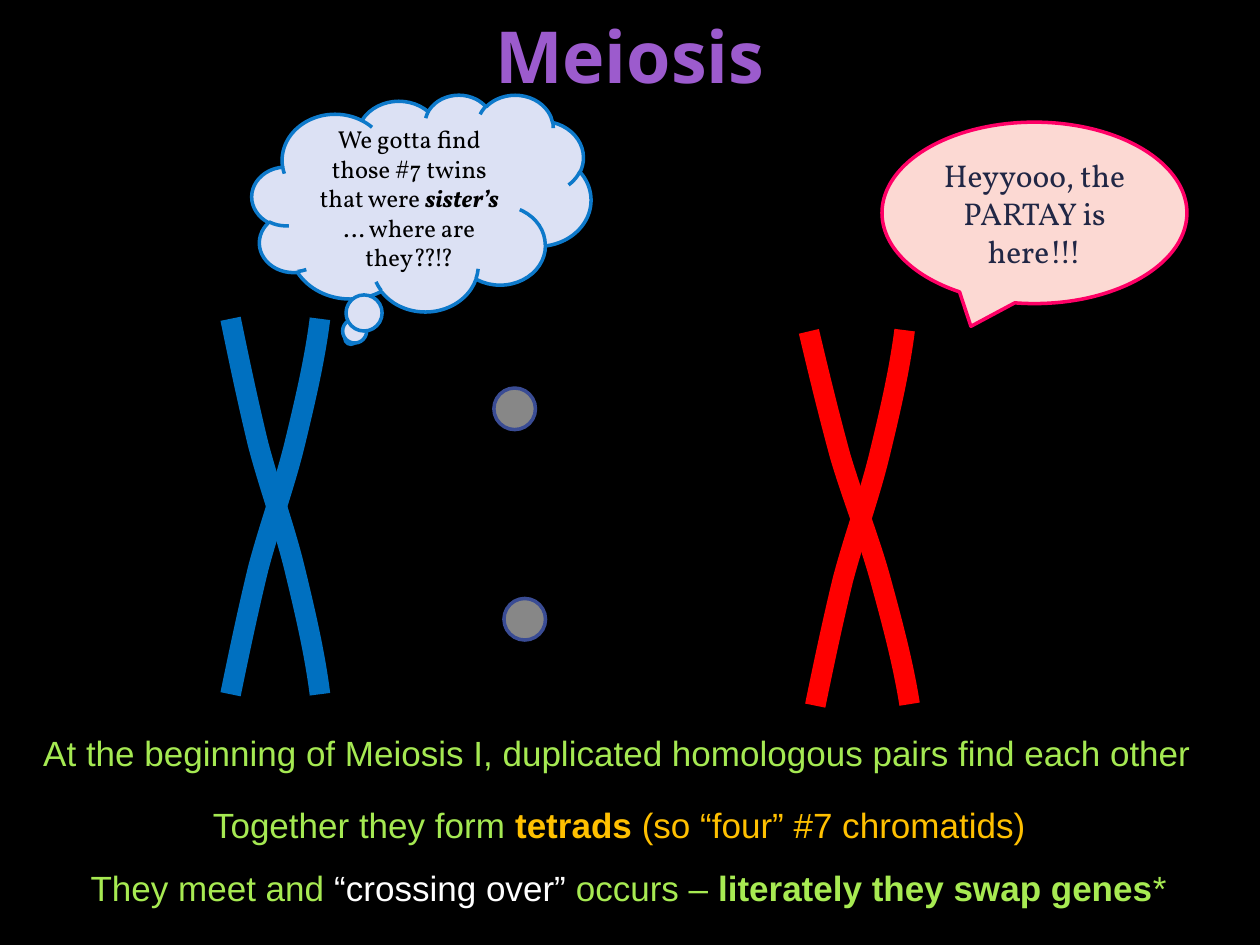
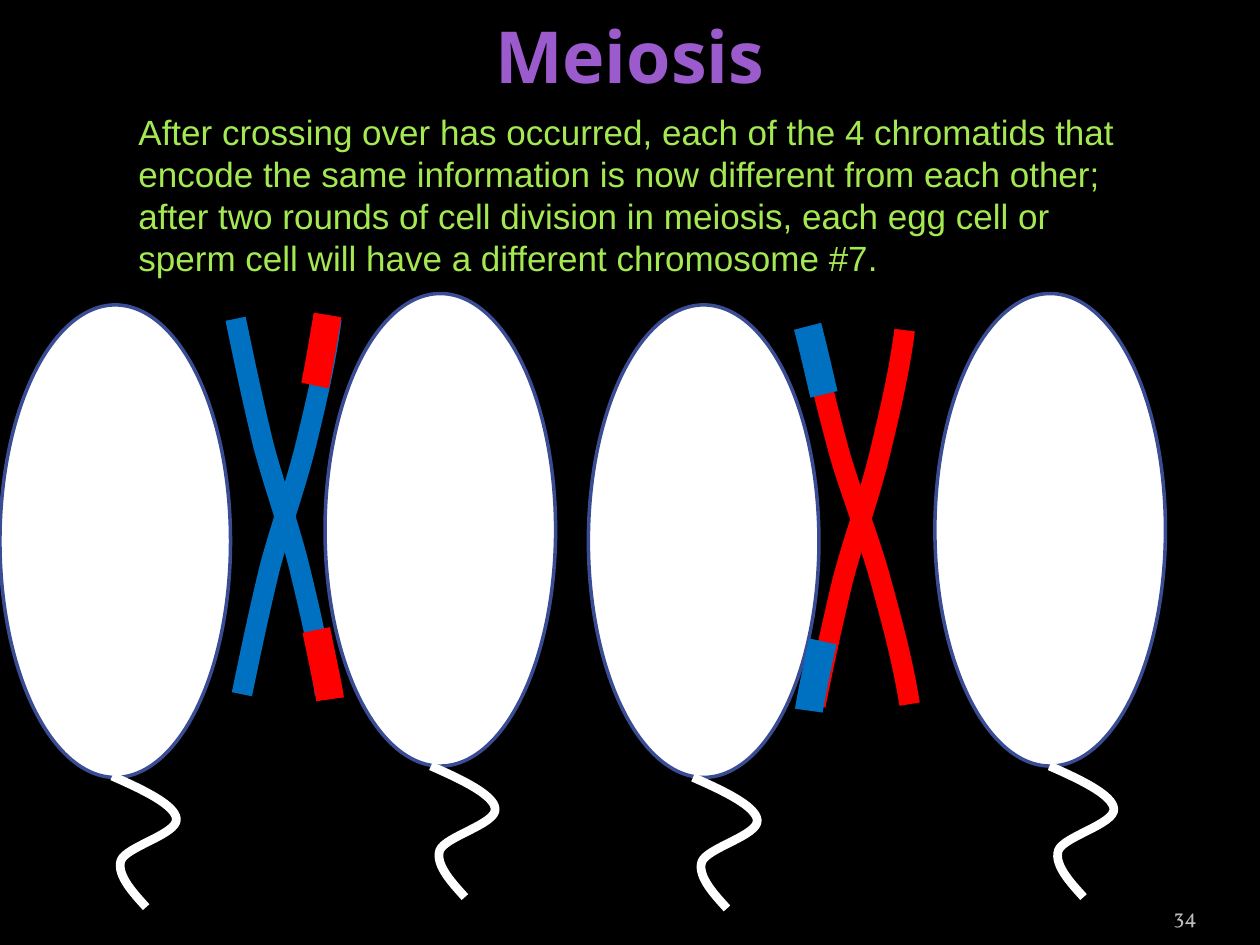
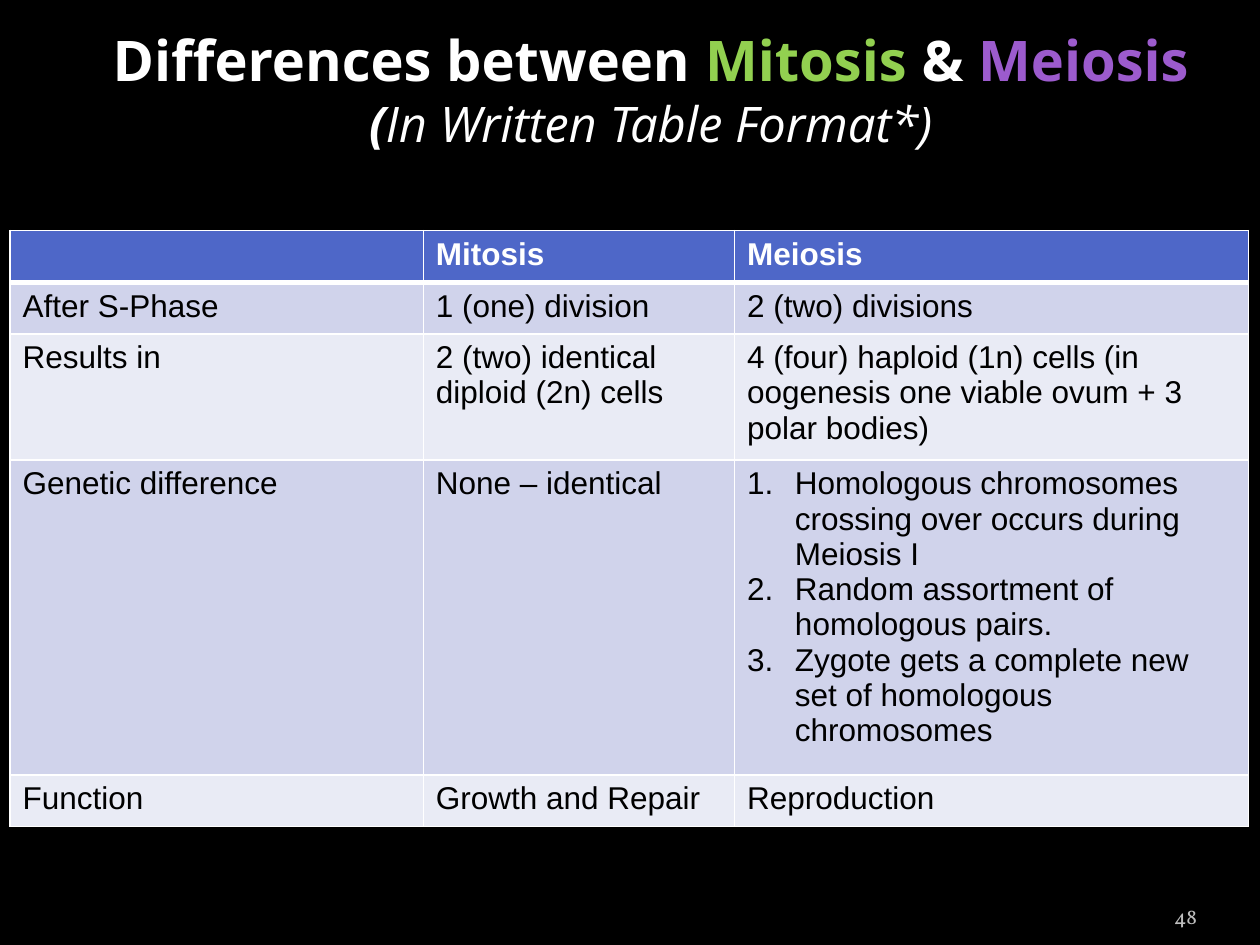
from lxml.etree import SubElement
from pptx import Presentation
from pptx.dml.color import RGBColor
from pptx.enum.shapes import MSO_SHAPE
from pptx.enum.text import MSO_ANCHOR, PP_ALIGN
from pptx.oxml.ns import qn
from pptx.util import Inches, Pt

COLORS = {
    "background": "000000", "white": "FFFFFF", "black": "000000",
    "purple": "9C5BCD", "green": "A5E952", "lime": "A7EA52",
    "mitosis": "92D050", "gold": "FFC000", "blue": "0070C0",
    "red": "FF0000", "outline": "3A4C94", "cloud": "DCE1F4",
    "cloud_line": "0D79CA", "bubble": "FCD9D3", "bubble_line": "FF0066",
    "navy": "212745", "number": "BDBDBD", "header": "4E67C8",
    "band_dark": "D0D3EB", "band_light": "E9EBF5",
}
RGB = {name: RGBColor.from_string(value) for name, value in COLORS.items()}

ARM = [(0, 0), (0.07, 0.34), (0.14, 0.67), (0.22, 1), (0.31, 1.34),
       (0.43, 1.66), (0.51, 1.99), (0.59, 2.32), (0.67, 2.66), (0.71, 2.98)]
TAIL = [(0, 0), (0.25, 0.11), (0.5, 0.23), (0.51, 0.34), (0.52, 0.46),
        (0.11, 0.56), (0.07, 0.67), (0.03, 0.79), (0.19, 0.95), (0.27, 1.04)]


def add_runs(paragraph, runs, font_name, size):
    for text, color, style in runs:
        for index, line in enumerate(text.split("\n")):
            if index:
                paragraph.add_line_break()
            if line:
                run = paragraph.add_run()
                run.text = line
                run.font.name = font_name
                run.font.size = Pt(28 if "s" in style else size)
                run.font.bold = "b" in style
                run.font.italic = "i" in style
                run.font.color.rgb = RGB[color]


def draw_curve(slide, points, color, width):
    start, *controls = [(Inches(x), Inches(y)) for x, y in points]
    builder = slide.shapes.build_freeform(*start)
    builder.add_line_segments(controls, close=False)
    shape = builder.convert_to_shape()
    outline = next(shape._element.iter(qn("a:path")))
    segments = outline.findall(qn("a:lnTo"))
    for first in range(0, len(segments), 3):
        curve = SubElement(outline, qn("a:cubicBezTo"))
        for segment in segments[first:first + 3]:
            curve.append(segment[0])
            outline.remove(segment)
    shape.shadow.inherit = False
    shape.fill.background()
    shape.line.color.rgb = RGB[color]
    shape.line.width = Pt(width)


presentation = Presentation()
presentation.slide_width = Inches(10)
presentation.slide_height = Inches(7.5)
slides = []
for _ in range(3):
    slide = presentation.slides.add_slide(presentation.slide_layouts[6])
    slide.background.fill.solid()
    slide.background.fill.fore_color.rgb = RGB["background"]
    slides.append(slide)
pairing_slide, sperm_slide, table_slide = slides

ovals = [
    (pairing_slide, 3.92, 3.08, 0.33, 0.33, 53),
    (pairing_slide, 4, 4.75, 0.33, 0.33, 53),
    (sperm_slide, 0, 2.42, 1.83, 3.75, 100),
    (sperm_slide, 2.58, 2.33, 1.83, 3.75, 100),
    (sperm_slide, 4.67, 2.42, 1.83, 3.75, 100),
    (sperm_slide, 7.42, 2.33, 1.83, 3.75, 100),
]
for slide, left, top, width, height, opacity in ovals:
    oval = slide.shapes.add_shape(MSO_SHAPE.OVAL, Inches(left), Inches(top),
                                  Inches(width), Inches(height))
    oval.shadow.inherit = False
    oval.fill.solid()
    oval.fill.fore_color.rgb = RGB["white"]
    oval.line.color.rgb = RGB["outline"]
    oval.line.width = Pt(2)
    if opacity < 100:
        color_element = oval._element.spPr.find(qn("a:solidFill"))[0]
        SubElement(color_element, qn("a:alpha")).set("val", str(opacity * 1000))

chromatids = [
    (pairing_slide, 1.83, 2.53, 1, 0, "blue"),
    (pairing_slide, 1.83, 5.51, -1, 0, "blue"),
    (pairing_slide, 6.47, 5.6, -1, 0, "red"),
    (pairing_slide, 6.42, 2.63, 1, 0.03, "red"),
    (sperm_slide, 1.87, 2.53, 1, 0, "blue"),
    (sperm_slide, 1.92, 5.51, -1, 0, "blue"),
    (sperm_slide, 6.47, 5.6, -1, 0, "red"),
    (sperm_slide, 6.42, 2.63, 1, 0.03, "red"),
]
for slide, left, start, direction, lean, color in chromatids:
    arm = [(left + x + lean * y, start + direction * (y - lean * x)) for x, y in ARM]
    draw_curve(slide, arm, color, 11.75)

swapped_tips = [
    ([(2.6, 2.5), (2.56, 2.74), (2.52, 2.97), (2.5, 3.06)], "red"),
    ([(2.51, 5), (2.56, 5.24), (2.61, 5.47), (2.62, 5.55)], "red"),
    ([(6.53, 5.09), (6.48, 5.32), (6.43, 5.56), (6.42, 5.64)], "blue"),
    ([(6.41, 2.59), (6.47, 2.82), (6.52, 3.05), (6.54, 3.13)], "blue"),
]
for points, color in swapped_tips:
    draw_curve(sperm_slide, points, color, 16)

for left, top in [(0.89, 6.16), (3.42, 6.08), (5.5, 6.17), (8.33, 6.08)]:
    draw_curve(sperm_slide, [(left + x, top + y) for x, y in TAIL], "white", 5)

callouts = [
    (MSO_SHAPE.CLOUD_CALLOUT, (2, 0.75, 2.69, 1.72), "cloud", "cloud_line", 14,
     [("We gotta find those #7 twins that were ", "black", ""),
      ("sister’s", "black", "bi"),
      (" … where are they??!?", "black", "")]),
    (MSO_SHAPE.OVAL_CALLOUT, (7, 0.97, 2.42, 1.44), "bubble", "bubble_line", 18,
     [("Heyyooo, the PARTAY is here!!!", "navy", "")]),
]
for kind, bounds, fill, line, size, runs in callouts:
    callout = pairing_slide.shapes.add_shape(kind, *map(Inches, bounds))
    callout.shadow.inherit = False
    callout.fill.solid()
    callout.fill.fore_color.rgb = RGB[fill]
    callout.line.color.rgb = RGB[line]
    callout.line.width = Pt(2)
    callout.text_frame.vertical_anchor = MSO_ANCHOR.MIDDLE
    paragraph = callout.text_frame.paragraphs[0]
    paragraph.alignment = PP_ALIGN.CENTER
    add_runs(paragraph, runs, "Vollkorn", size)

titles = [
    (pairing_slide, (0.5, 0, 9, 0.87), 41, [("Meiosis", "purple", "b")]),
    (sperm_slide, (0.5, 0, 9, 0.87), 41, [("Meiosis", "purple", "b")]),
    (table_slide, (0.25, 0.08, 9.83, 1.25), 32,
     [("Differences between ", "white", "b"), ("Mitosis", "mitosis", "b"),
      (" & ", "white", "b"), ("Meiosis\n", "purple", "b"),
      ("(", "white", "bis"), ("In Written Table Format*)", "white", "is")]),
]
for slide, bounds, size, runs in titles:
    frame = slide.shapes.add_textbox(*map(Inches, bounds)).text_frame
    frame.word_wrap = True
    frame.vertical_anchor = MSO_ANCHOR.MIDDLE
    paragraph = frame.paragraphs[0]
    paragraph.alignment = PP_ALIGN.CENTER
    add_runs(paragraph, runs, "Open Sans", size)

statements = [
    (pairing_slide, (0.17, 5.76, 9.46, 0.44), True, PP_ALIGN.CENTER,
     [("At the beginning of Meiosis I, duplicated homologous pairs find each other",
       "green", "")]),
    (pairing_slide, (0.62, 6.83, 8.79, 0.44), False, PP_ALIGN.LEFT,
     [("They meet and ", "lime", ""), ("“crossing over” ", "white", ""),
      ("occurs – ", "lime", ""), ("literately they swap genes", "lime", "b"),
      ("*", "lime", "")]),
    (pairing_slide, (1.52, 6.33, 6.76, 0.77), False, PP_ALIGN.LEFT,
     [(" Together they form ", "green", ""), ("tetrads ", "gold", "b"),
      ("(so “four” #7 chromatids)", "gold", "")]),
    (sperm_slide, (1, 0.83, 8.25, 1.45), True, PP_ALIGN.LEFT,
     [("After crossing over has occurred, each of the 4 chromatids that encode the same "
       "information is now different from each other; after two rounds of cell division in "
       "meiosis, each egg cell or sperm cell will have a different chromosome #7.",
       "green", "")]),
]
for slide, bounds, wrap, alignment, runs in statements:
    frame = slide.shapes.add_textbox(*map(Inches, bounds)).text_frame
    frame.word_wrap = wrap
    paragraph = frame.paragraphs[0]
    paragraph.alignment = alignment
    add_runs(paragraph, runs, "Arial", 20)

rows = [
    ["", "Mitosis", "Meiosis"],
    ["After S-Phase", "1 (one) division", "2 (two) divisions"],
    ["Results in", "2 (two) identical \ndiploid (2n) cells",
     "4 (four) haploid (1n) cells (in oogenesis one viable ovum + 3 polar bodies)"],
    ["Genetic difference", "None – identical",
     ["Homologous chromosomes crossing over occurs during Meiosis I",
      "Random assortment of homologous pairs.",
      "Zygote gets a complete new set of homologous chromosomes"]],
    ["Function", "Growth and Repair", "Reproduction"],
]
table_frame = table_slide.shapes.add_table(5, 3, Inches(0.08), Inches(1.83),
                                           Inches(9.83), Inches(4.44))
table = table_frame.table
table.horz_banding = False
for column, width in zip(table.columns, [3.28, 2.47, 4.08]):
    column.width = Inches(width)
for row, height in zip(table.rows, [0.41, 0.41, 0.76, 1.34, 0.41]):
    row.height = Inches(height)
table_frame.height = Inches(4.44)
for row_index, row in enumerate(rows):
    is_header = row_index == 0
    fill = "header" if is_header else ("band_light", "band_dark")[row_index % 2]
    for column_index, content in enumerate(row):
        cell = table.cell(row_index, column_index)
        properties = cell._tc.get_or_add_tcPr()
        for side in "LRTB":
            thick = (is_header and side == "B") or (row_index == 1 and side == "T")
            border = SubElement(properties, qn(f"a:ln{side}"), w=str(Pt(3 if thick else 1)))
            border_fill = SubElement(border, qn("a:solidFill"))
            SubElement(border_fill, qn("a:srgbClr"), val=COLORS["white"])
        cell.fill.solid()
        cell.fill.fore_color.rgb = RGB[fill]
        numbered = isinstance(content, list)
        for index, text in enumerate(content if numbered else [content]):
            frame = cell.text_frame
            paragraph = frame.add_paragraph() if index else frame.paragraphs[0]
            if numbered:
                paragraph_properties = paragraph._p.get_or_add_pPr()
                paragraph_properties.set("marL", str(Inches(0.38)))
                paragraph_properties.set("indent", str(-Inches(0.38)))
                SubElement(paragraph_properties, qn("a:buFont"), typeface="+mj-lt")
                SubElement(paragraph_properties, qn("a:buAutoNum"), type="arabicPeriod")
            style = ("white", "b") if is_header else ("black", "")
            add_runs(paragraph, [(text, *style)], "Arial", 18)

for slide, number in [(sperm_slide, "34"), (table_slide, "48")]:
    frame = slide.shapes.add_textbox(Inches(8.67), Inches(7.02),
                                     Inches(0.83), Inches(0.4)).text_frame
    frame.word_wrap = True
    frame.vertical_anchor = MSO_ANCHOR.BOTTOM
    frame.margin_left = frame.margin_right = 0
    paragraph = frame.paragraphs[0]
    paragraph.alignment = PP_ALIGN.RIGHT
    add_runs(paragraph, [(number, "number", "")], "Vollkorn", 12)

presentation.save("out.pptx")
